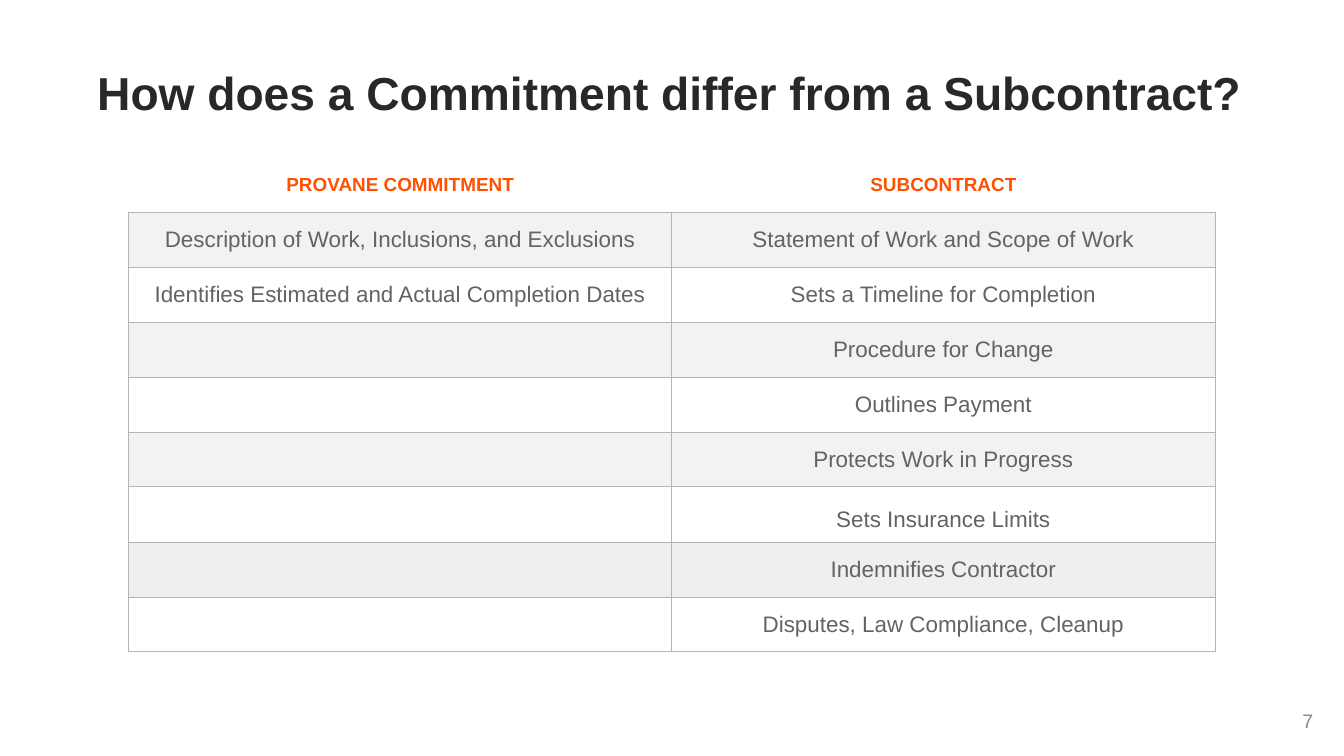
import pptx
import pptx.dml.color
import pptx.enum.text
import pptx.oxml
import pptx.oxml.ns
import pptx.util

WIDTH, HEIGHT = 26.67, 15
COLORS = {"title": "282828", "header": "FF5200", "body": "626366", "number": "8B8B8B",
          "rule": "B5B6B4", "white": "FFFFFF", "band": "F2F2F2", "band_alt": "EFEFEF"}
ALIGN = pptx.enum.text.PP_ALIGN
ANCHOR = pptx.enum.text.MSO_ANCHOR
FORMATS = {
    "title": {"size": pptx.util.Pt(66), "bold": True},
    "header": {"size": pptx.util.Pt(27), "bold": True},
    "body": {"size": pptx.util.Pt(32), "bold": False},
    "number": {"size": pptx.util.Pt(28), "bold": False},
}
HEADERS = ("PROVANE COMMITMENT", "SUBCONTRACT")
ROWS = [
    ("Description of Work, Inclusions, and Exclusions", "Statement of Work and Scope of Work"),
    ("Identifies Estimated and Actual Completion Dates", "Sets a Timeline for Completion"),
    ("", "Procedure for Change"),
    ("", "Outlines Payment"),
    ("", "Protects Work in Progress"),
    ("", "Sets Insurance Limits"),
    ("", "Indemnifies Contractor"),
    ("", "Disputes, Law Compliance, Cleanup"),
]
FILLS = ["white"] + ["band", "white"] * 3 + ["band_alt", "white"]
LOWERED_ROW = 6  # its text sits a little below the middle


def rgb(name):
    return pptx.dml.color.RGBColor.from_string(COLORS[name])


class Deck:
    """Slide with its style; positions are shares of the slide's size."""

    def __init__(self):
        self.prs = pptx.Presentation()
        self.prs.slide_width = pptx.util.Inches(WIDTH)
        self.prs.slide_height = pptx.util.Inches(HEIGHT)
        self.s = self.prs.slides.add_slide(self.prs.slide_layouts[6])

    def box(self, x, y, w, h):
        sw, sh = self.prs.slide_width, self.prs.slide_height
        return [int(v) for v in (x * sw, y * sh, w * sw, h * sh)]

    def add_run(self, tf, text, style, align):
        p = tf.paragraphs[0]
        p.alignment = align
        r = p.add_run()
        r.text = text
        for key, value in {"name": "Arial", **FORMATS[style]}.items():
            setattr(r.font, key, value)
        r.font.color.rgb = rgb(style)
        return p

    def text(self, share, text, style, align, anchor):
        tf = self.s.shapes.add_textbox(*self.box(*share)).text_frame
        tf.word_wrap = True
        tf.vertical_anchor = anchor
        return self.add_run(tf, text, style, align)

    def borders(self, cell, sides):
        tc_pr = cell._tc.get_or_add_tcPr()
        for i, side in enumerate("LRTB"):
            fill = (f'<a:solidFill><a:srgbClr val="{COLORS["rule"]}"/></a:solidFill>'
                    if side in sides else "<a:noFill/>")
            tc_pr.insert(i, pptx.oxml.parse_xml(
                f'<a:ln{side} {pptx.oxml.ns.nsdecls("a")} w="12700">{fill}</a:ln{side}>'))

    def table(self, share, rows, fills):
        table = self.s.shapes.add_table(len(rows), len(rows[0]), *self.box(*share)).table
        table.first_row = table.horz_banding = False
        for i, (row, fill) in enumerate(zip(rows, fills)):
            for j, text in enumerate(row):
                cell = table.cell(i, j)
                top, bottom = (0.38, 0.18) if i == LOWERED_ROW else (0.2, 0.2)
                margins = {"margin_left": 0.3, "margin_right": 0.3,
                           "margin_top": top, "margin_bottom": bottom}
                for key, value in margins.items():
                    setattr(cell, key, pptx.util.Inches(value))
                cell.vertical_anchor = ANCHOR.MIDDLE
                cell.fill.solid()
                cell.fill.fore_color.rgb = rgb(fill)
                self.borders(cell, "LRTB" if i else "B")
                if text:
                    self.add_run(cell.text_frame, text, "body" if i else "header", ALIGN.CENTER)


def main():
    deck = Deck()

    # Title
    p = deck.text((1.83 / WIDTH, 1.36 / HEIGHT, 23 / WIDTH, 1.23 / HEIGHT),
                  "How does a Commitment differ from a Subcontract?",
                  "title", ALIGN.LEFT, ANCHOR.TOP)
    p.line_spacing = 0.9

    # Comparison table
    rows = [HEADERS] + ROWS
    deck.table((2.55 / WIDTH, 3.12 / HEIGHT, 2 * 10.78 / WIDTH, len(rows) * 1.09 / HEIGHT),
               rows, FILLS)

    # Page number
    deck.text((20.16 / WIDTH, 13.9 / HEIGHT, 6 / WIDTH, 0.8 / HEIGHT),
              "7", "number", ALIGN.RIGHT, ANCHOR.MIDDLE)

    deck.prs.save("out.pptx")


if __name__ == "__main__":
    main()
